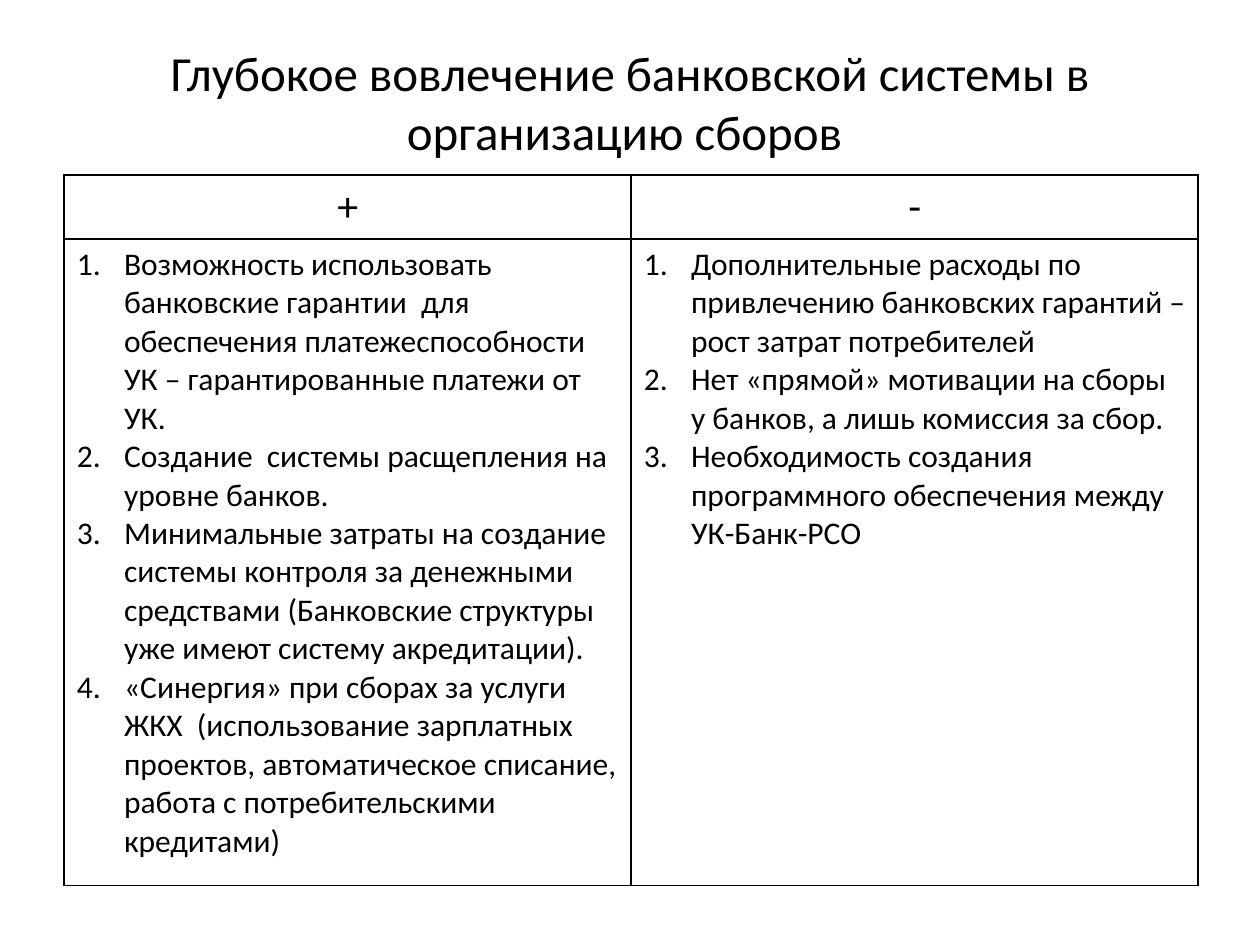
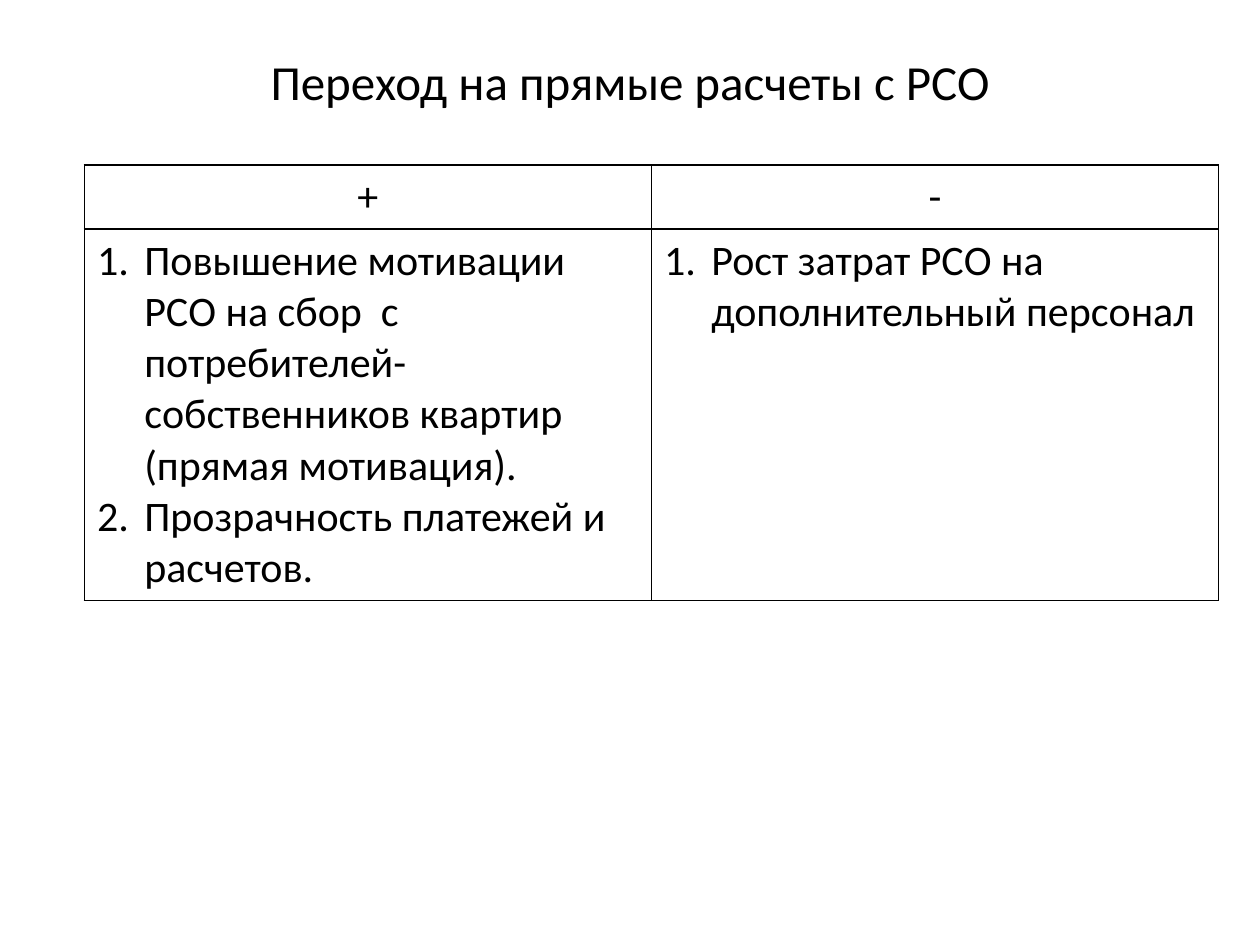
from pptx import Presentation
from pptx.dml.color import RGBColor as RGB
from pptx.enum.text import MSO_ANCHOR as Anchor, PP_ALIGN as Align
from pptx.oxml import parse_xml
from pptx.oxml.ns import nsdecls
from pptx.util import Inches, Pt

BLACK = RGB(0, 0, 0)
WHITE = RGB(255, 255, 255)
FONT = "Calibri"
COLS, ROWS = 100, 75
WIDE = 90
HEAD = 5
INDENT = 3.75


class Deck:
    def __init__(self):
        self.prs = Presentation()
        self.prs.slide_width = Inches(10)
        self.prs.slide_height = Inches(7.5)
        self.slide = None

    def x(self, cols):
        return round(self.prs.slide_width * cols / COLS)

    def y(self, rows):
        return round(self.prs.slide_height * rows / ROWS)

    def style(self, para, size, align):
        para.alignment = align
        for run in para.runs:
            font = run.font
            font.name, font.size, font.bold = FONT, Pt(size), False
            font.color.rgb = BLACK

    def page(self, text, tall):
        self.slide = self.prs.slides.add_slide(self.prs.slide_layouts[5])
        title = self.slide.shapes.title
        title.left, title.top = self.x(5), self.y(3)
        title.width, title.height = self.x(WIDE), self.y(tall)
        frame = title.text_frame
        frame.text = text
        frame.vertical_anchor = Anchor.MIDDLE
        frame.word_wrap = True
        self.style(frame.paragraphs[0], 28, Align.CENTER)

    def number(self, para):
        props = para._p.get_or_add_pPr()
        props.set("marL", str(self.x(INDENT)))
        props.set("indent", str(-self.x(INDENT)))
        props.append(parse_xml(
            f'<a:buAutoNum {nsdecls("a")} type="arabicPeriod"/>'))

    def border(self, cell):
        cell.fill.solid()
        cell.fill.fore_color.rgb = WHITE
        props = cell._tc.get_or_add_tcPr()
        for spot, side in enumerate("LRTB"):
            props.insert(spot, parse_xml(
                f'<a:ln{side} {nsdecls("a")} w="{Pt(1)}"><a:solidFill>'
                f'<a:srgbClr val="{BLACK}"/></a:solidFill></a:ln{side}>'))

    def table(self, left, top, body, size, pros, cons):
        grid = self.slide.shapes.add_table(
            2, 2, self.x(left), self.y(top),
            self.x(WIDE), self.y(HEAD + body)).table
        grid.first_row = grid.horz_banding = False
        for row, tall in zip(grid.rows, (HEAD, body)):
            row.height = self.y(tall)
        for col, (sign, items) in enumerate((("+", pros), ("-", cons))):
            head, cell = grid.cell(0, col), grid.cell(1, col)
            head.text_frame.text = sign
            self.style(head.text_frame.paragraphs[0], 24, Align.CENTER)
            cell.text_frame.text = "\n".join(items)
            for para in cell.text_frame.paragraphs:
                self.style(para, size, Align.LEFT)
                self.number(para)
            self.border(head)
            self.border(cell)


def main():
    deck = Deck()
    deck.page("Глубокое вовлечение банковской системы в организацию сборов ", 10.1)
    deck.table(5.1, 13.9, 51.3, 18, [
        "Возможность использовать банковские гарантии  для обеспечения "
        "платежеспособности УК – гарантированные платежи от УК.",
        "Создание  системы расщепления на уровне банков.",
        "Минимальные затраты на создание системы контроля за денежными "
        "средствами (Банковские структуры уже имеют систему акредитации).",
        "«Синергия» при сборах за услуги ЖКХ  (использование зарплатных "
        "проектов, автоматическое списание, работа с потребительскими "
        "кредитами)",
    ], [
        "Дополнительные расходы по привлечению банковских гарантий – "
        "рост затрат потребителей",
        "Нет «прямой» мотивации на сборы у банков, а лишь комиссия за сбор.",
        "Необходимость создания программного обеспечения между УК-Банк-РСО",
    ])
    deck.page("Переход на прямые расчеты с РСО", 6.9)
    deck.table(6.7, 13.1, 29, 24, [
        "Повышение мотивации  РСО на сбор  с потребителей- "
        "собственников квартир (прямая мотивация).",
        "Прозрачность платежей и расчетов.",
    ], ["Рост затрат РСО на дополнительный персонал"])
    deck.prs.save("out.pptx")


if __name__ == "__main__":
    main()
